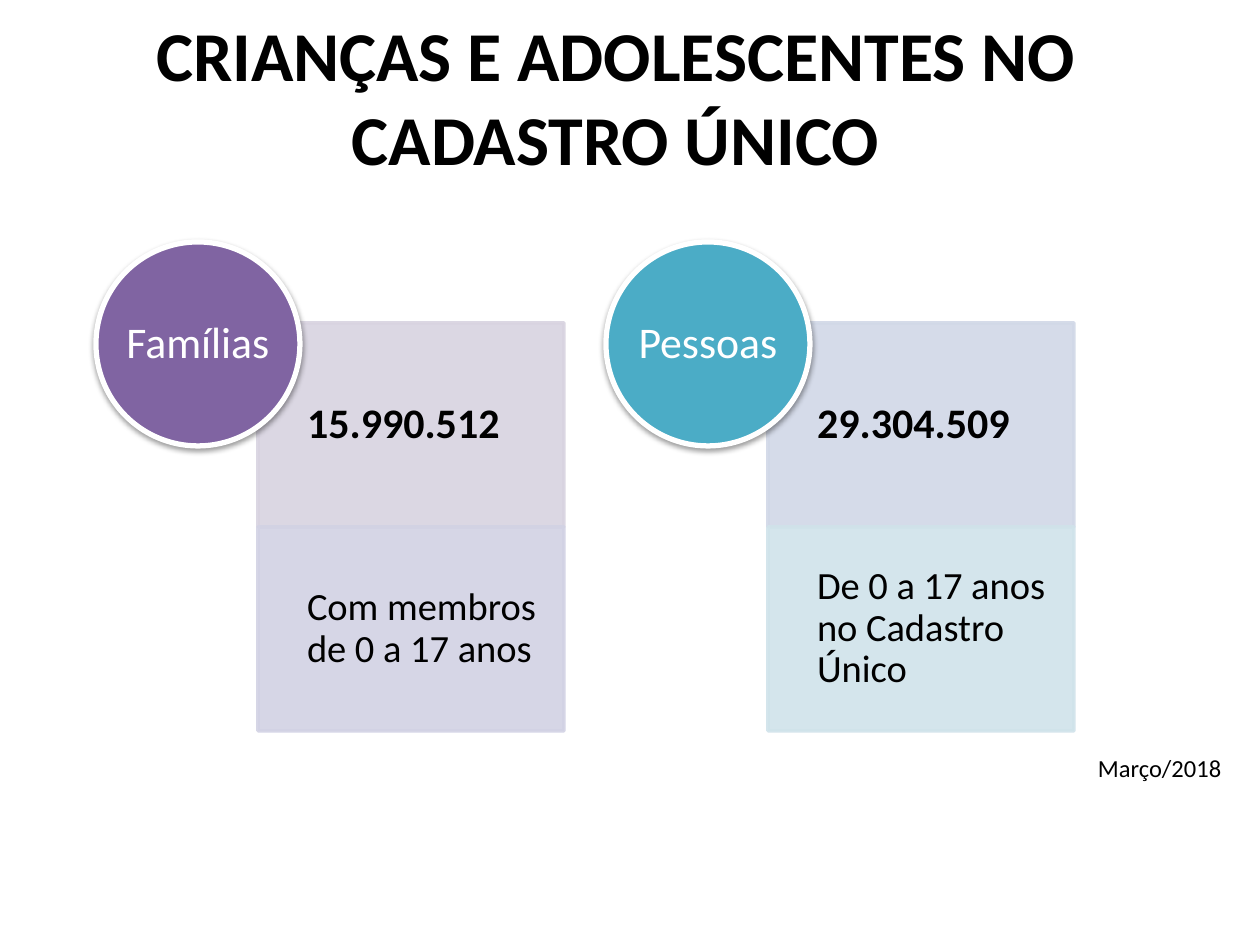
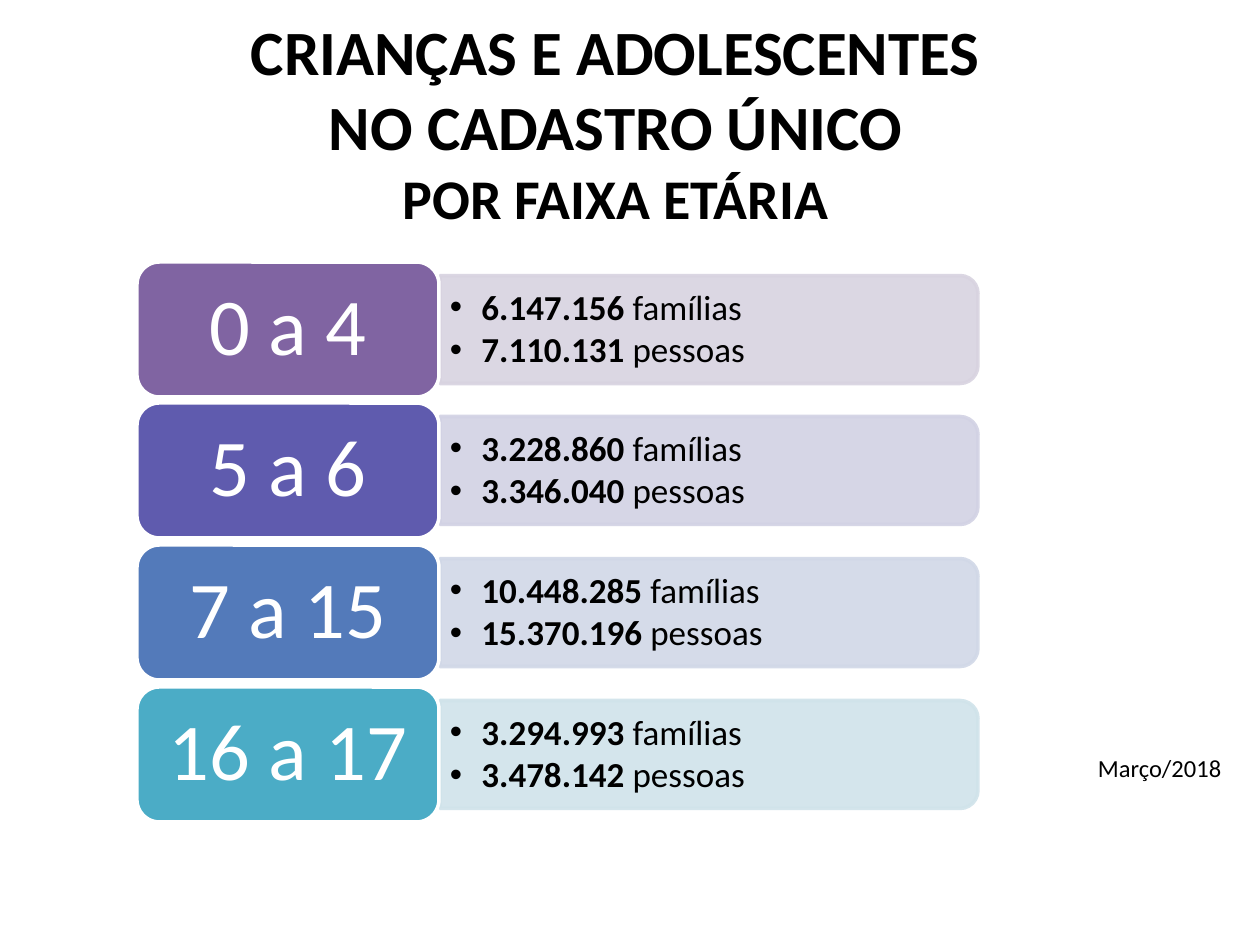
import pptx
import pptx.util
import pptx.dml.color
import pptx.enum.shapes
import pptx.enum.text
import pptx.oxml.ns
from lxml import etree

RGB = pptx.dml.color.RGBColor
SHAPE = pptx.enum.shapes.MSO_SHAPE
ALIGN = pptx.enum.text.PP_ALIGN
ANCHOR = pptx.enum.text.MSO_ANCHOR
qn = pptx.oxml.ns.qn

EMU_PER_PX = 914400 / 126
FONT = "Calibri"
BLACK = RGB(0x00, 0x00, 0x00)
WHITE = RGB(0xFF, 0xFF, 0xFF)
PURPLE = RGB(0x80, 0x64, 0xA2)
INDIGO = RGB(0x5F, 0x5B, 0xAE)
BLUE = RGB(0x53, 0x7A, 0xBA)
TEAL = RGB(0x4B, 0xAC, 0xC6)
PALE_PURPLE = RGB(0xD8, 0xD3, 0xE0)
PALE_INDIGO = RGB(0xD2, 0xD2, 0xE4)
PALE_BLUE = RGB(0xD1, 0xD8, 0xE7)
PALE_TEAL = RGB(0xD0, 0xE3, 0xEA)

TOTALS = [
    ("Famílias", PURPLE, "15.990.512", PALE_PURPLE,
     "Com membros de 0 a 17 anos", PALE_INDIGO),
    ("Pessoas", TEAL, "29.304.509", PALE_BLUE,
     "De 0 a 17 anos no Cadastro Único", PALE_TEAL),
]
AGE_BANDS = [
    ("0 a 4", PURPLE, PALE_PURPLE, "6.147.156", "7.110.131"),
    ("5 a 6", INDIGO, PALE_INDIGO, "3.228.860", "3.346.040"),
    ("7 a 15", BLUE, PALE_BLUE, "10.448.285", "15.370.196"),
    ("16 a 17", TEAL, PALE_TEAL, "3.294.993", "3.478.142"),
]


def px(length):
    return pptx.util.Emu(round(length * EMU_PER_PX))


def add_span(para, text, size, color=BLACK, bold=False):
    span = para.add_run()
    span.text = text
    span.font.name = FONT
    span.font.size = pptx.util.Pt(size)
    span.font.bold = bold
    span.font.color.rgb = color


def set_frame(frame, insets, anchor=ANCHOR.MIDDLE):
    """Set wrapping, anchor and the left, top, right and bottom insets."""
    frame.word_wrap = True
    frame.vertical_anchor = anchor
    (frame.margin_left, frame.margin_top,
     frame.margin_right, frame.margin_bottom) = map(px, insets)


def add_panel(page, kind, bounds, fill, line, line_width):
    panel = page.shapes.add_shape(kind, *map(px, bounds))
    panel.shadow.inherit = False
    panel.fill.solid()
    panel.fill.fore_color.rgb = fill
    panel.line.color.rgb = line
    panel.line.width = pptx.util.Pt(line_width)
    return panel


def add_pale_panel(page, kind, bounds, color):
    """Add a panel whose fill and outline are 90 % opaque."""
    panel = add_panel(page, kind, bounds, color, color, 2)
    for paint in panel._element.spPr.iter(qn("a:srgbClr")):
        etree.SubElement(paint, qn("a:alpha"), val="90000")
    return panel


def add_drop_shadow(shape):
    effects = shape._element.spPr.find(qn("a:effectLst"))
    shadow = etree.SubElement(effects, qn("a:outerShdw"), blurRad="40000",
                              dist="20000", dir="5400000", rotWithShape="0")
    paint = etree.SubElement(shadow, qn("a:srgbClr"), val="000000")
    etree.SubElement(paint, qn("a:alpha"), val="38000")


def write_label(shape, text, size, insets, align=ALIGN.CENTER,
                color=WHITE, bold=False):
    set_frame(shape.text_frame, insets)
    para = shape.text_frame.paragraphs[0]
    para.alignment = align
    para.line_spacing = 0.9
    add_span(para, text, size, color, bold)


def add_bullet(para):
    props = para._p.get_or_add_pPr()
    props.set("marL", "228600")
    props.set("indent", "-228600")
    etree.SubElement(props, qn("a:buFont"), typeface="Arial")
    etree.SubElement(props, qn("a:buChar"), char="•")


def add_page(deck, title_lines):
    """Add a page with its title, given as (text, size) lines, and date."""
    page = deck.slides.add_slide(deck.slide_layouts[5])
    title = page.shapes.title
    title.left, title.top, title.width, title.height = map(px, (25, 6, 1181, 100))
    frame = title.text_frame
    frame.auto_size = pptx.enum.text.MSO_AUTO_SIZE.NONE
    set_frame(frame, (13, 6, 13, 6), ANCHOR.TOP)
    for index, (text, size) in enumerate(title_lines):
        para = frame.add_paragraph() if index else frame.paragraphs[0]
        para.alignment = ALIGN.CENTER
        add_span(para, text, size, bold=True)

    date = page.shapes.add_textbox(*map(px, (1085, 747, 160, 43)))
    set_frame(date.text_frame, (13, 6, 13, 6), ANCHOR.TOP)
    add_span(date.text_frame.paragraphs[0], "Março/2018", 14)
    return page


def add_total(page, left, total):
    """Add two stacked panels with a circle over their top left corner."""
    name, color, count, count_fill, detail, detail_fill = total
    side = 204
    rows = [(count, 24, True, count_fill), (detail, 22, False, detail_fill)]
    for row, (text, size, bold, fill) in enumerate(rows):
        bounds = (left + 162, 323 + row * side, 306, side)
        panel = add_pale_panel(page, SHAPE.RECTANGLE, bounds, fill)
        write_label(panel, text, size, (49, 22, 22, 22), ALIGN.LEFT, BLACK, bold)
    circle = add_panel(page, SHAPE.OVAL, (left, 242, side, side), color, WHITE, 3)
    add_drop_shadow(circle)
    write_label(circle, name, 25, (0, 0, 0, 0))


def add_age_band(page, top, age_band):
    ages, color, pale, families, people = age_band
    height, thickness, length = 135, 108, 538
    label_left, label_width = 137, 302
    band_left = label_left + label_width + 1
    middle = top + height / 2

    # Rotating a quarter turn puts the rounded corners on the right.
    bounds = (band_left + (length - thickness) / 2, middle - length / 2,
              thickness, length)
    band = add_pale_panel(page, SHAPE.ROUND_2_SAME_RECTANGLE, bounds, pale)
    band.rotation = 90

    box = page.shapes.add_textbox(*map(px, (band_left, middle - 48, 532, 97)))
    frame = box.text_frame
    set_frame(frame, (10, 5, 10, 5))
    rows = [(families, " famílias"), (people, " pessoas")]
    for index, (count, unit) in enumerate(rows):
        para = frame.add_paragraph() if index else frame.paragraphs[0]
        add_bullet(para)
        para.line_spacing = 0.9
        para.space_after = pptx.util.Pt(2.5)
        add_span(para, count, 20, bold=True)
        add_span(para, unit, 20)

    label = add_panel(page, SHAPE.ROUNDED_RECTANGLE,
                      (label_left, top, label_width, height), color, WHITE, 2)
    write_label(label, ages, 46, (24, 12, 24, 12))


def main():
    deck = pptx.Presentation()
    deck.slide_width, deck.slide_height = px(1260), px(945)

    page = add_page(deck, [("CRIANÇAS E ADOLESCENTES NO CADASTRO ÚNICO", 40)])
    for column, total in enumerate(TOTALS):
        add_total(page, 96 + column * 510, total)

    page = add_page(deck, [("CRIANÇAS E ADOLESCENTES", 36),
                           ("NO CADASTRO ÚNICO", 36),
                           ("POR FAIXA ETÁRIA", 32)])
    for row, age_band in enumerate(AGE_BANDS):
        add_age_band(page, 262 + row * 425 // 3, age_band)

    deck.save("out.pptx")


if __name__ == "__main__":
    main()
